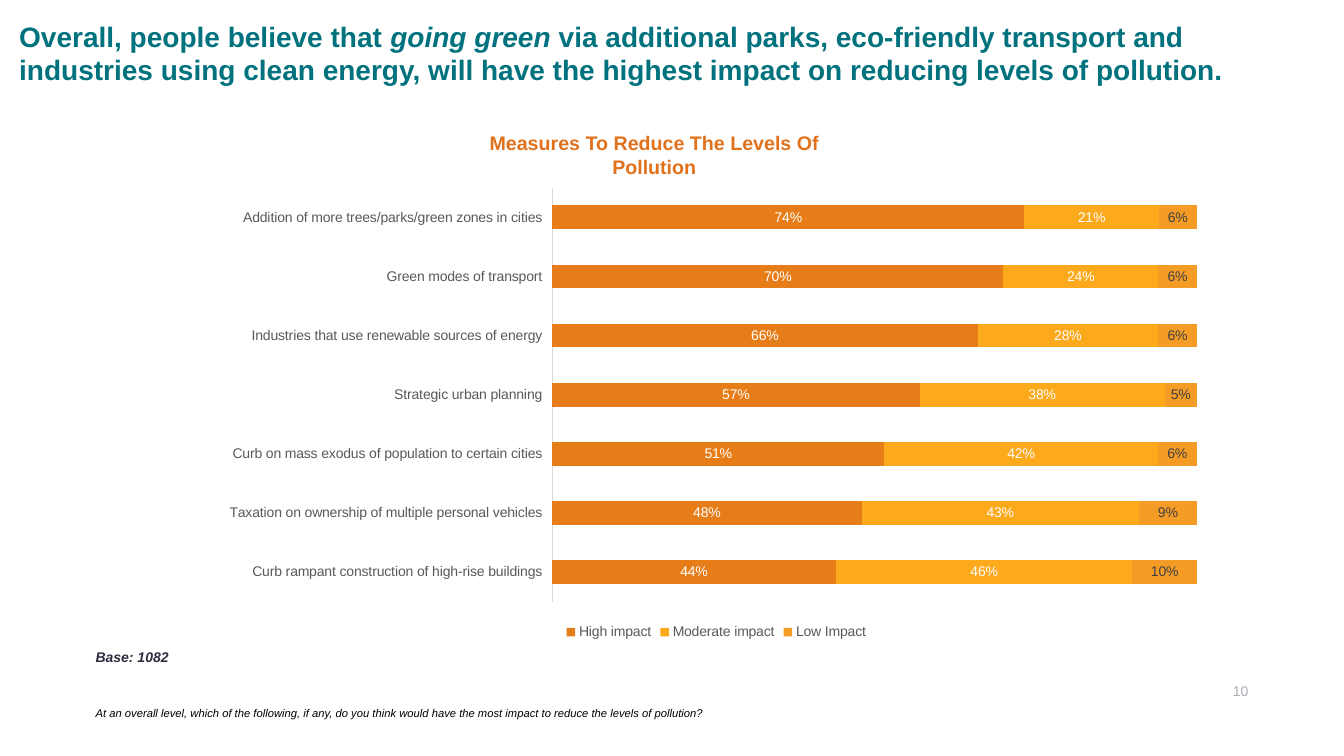
from lxml.etree import SubElement
from pptx import Presentation
from pptx.chart.data import CategoryChartData
from pptx.dml.color import RGBColor
from pptx.enum.chart import XL_CHART_TYPE, XL_LABEL_POSITION, XL_LEGEND_POSITION, XL_TICK_LABEL_POSITION, XL_TICK_MARK
from pptx.enum.text import MSO_ANCHOR, MSO_AUTO_SIZE, PP_ALIGN
from pptx.oxml import parse_xml
from pptx.oxml.ns import nsdecls, qn
from pptx.util import Inches, Pt

MEASURES = [
    ("Addition of more trees/parks/green zones in cities", 0.74, 0.21, 0.06),
    ("Green modes of transport", 0.70, 0.24, 0.06),
    ("Industries that use renewable sources of energy", 0.66, 0.28, 0.06),
    ("Strategic urban planning", 0.57, 0.38, 0.05),
    ("Curb on mass exodus of population to certain cities", 0.51, 0.42, 0.06),
    ("Taxation on ownership of multiple personal vehicles", 0.48, 0.43, 0.09),
    ("Curb rampant construction of high-rise buildings", 0.44, 0.46, 0.10),
]
IMPACTS = [
    ("High impact", "E77D18", "FFFFFF"),
    ("Moderate impact", "FCA91C", "FFFFFF"),
    ("Low Impact", "F59C27", "404040"),
]


def rgb(value):
    return RGBColor.from_string(value)


class SlideBuilder:
    typeface = "Arial"
    teal, orange, ink, grey, rule = "00727D", "E1711B", "332C41", "595959", "D9D9D9"

    def __init__(self, slide):
        self.slide = slide

    def style(self, font, size, color, bold=False, italic=None):
        font.name = self.typeface
        font.size = Pt(size)
        font.bold = bold
        font.italic = italic
        font.color.rgb = rgb(color)

    def headline(self, box, parts):
        title = self.slide.shapes.title
        title.left, title.top, title.width, title.height = map(Inches, box)
        frame = title.text_frame
        frame.word_wrap = True
        frame.auto_size = MSO_AUTO_SIZE.NONE
        frame.vertical_anchor = MSO_ANCHOR.TOP
        paragraph = frame.paragraphs[0]
        paragraph.alignment = PP_ALIGN.LEFT
        paragraph.line_spacing = 1.0
        paragraph.space_before = Pt(0)
        self.style(paragraph.font, 20, self.teal, bold=True)
        for words, italic in parts:
            run = paragraph.add_run()
            run.text = words
            run.font.italic = italic

    def text(self, box, words, size, color, bold=False, italic=False,
             align=PP_ALIGN.LEFT, opacity=None):
        frame = self.slide.shapes.add_textbox(*map(Inches, box)).text_frame
        frame.word_wrap = True
        paragraph = frame.paragraphs[0]
        paragraph.text = words
        paragraph.alignment = align
        self.style(paragraph.font, size, color, bold, italic)
        if opacity is not None:
            for tint in paragraph._p.iter(qn("a:srgbClr")):
                SubElement(tint, qn("a:alpha"), val=str(opacity * 1000))

    def impact_chart(self, box, plot_box, measures, impacts):
        data = CategoryChartData(number_format="0%")
        labels, *shares = zip(*measures)
        data.categories = labels
        for (impact, _, _), values in zip(impacts, shares):
            data.add_series(impact, values)
        chart = self.slide.shapes.add_chart(
            XL_CHART_TYPE.BAR_STACKED_100, *map(Inches, box), data).chart
        chart.has_title = False
        self.style(chart.font, 10, self.grey)

        chart.has_legend = True
        chart.legend.position = XL_LEGEND_POSITION.BOTTOM
        chart.legend.include_in_layout = False
        self.style(chart.legend.font, 10, self.grey)

        measure_axis = chart.category_axis
        measure_axis.reverse_order = True
        measure_axis.major_tick_mark = XL_TICK_MARK.NONE
        measure_axis.tick_label_position = XL_TICK_LABEL_POSITION.LOW
        measure_axis.format.line.color.rgb = rgb(self.rule)
        measure_axis.format.line.width = Pt(0.75)
        self.style(measure_axis.tick_labels.font, 10, self.grey)

        share_axis = chart.value_axis
        share_axis.visible = False
        share_axis.has_major_gridlines = False
        share_axis.minimum_scale, share_axis.maximum_scale = 0, 1

        plot = chart.plots[0]
        plot.gap_width, plot.overlap = 150, 100
        plot.vary_by_categories = False
        for series, (_, fill, label_color) in zip(plot.series, impacts):
            series.format.fill.solid()
            series.format.fill.fore_color.rgb = rgb(fill)
            value_labels = series.data_labels
            value_labels.show_value = True
            value_labels.number_format = "0%"
            value_labels.number_format_is_linked = False
            value_labels.position = XL_LABEL_POSITION.CENTER
            self.style(value_labels.font, 10, label_color)
        self.place_plot(chart, plot_box)

    def place_plot(self, chart, plot_box):
        sizes = "".join(f'<c:{key} val="{value}"/>' for key, value in zip("xywh", plot_box))
        layout = parse_xml(
            f'<c:layout {nsdecls("c")}><c:manualLayout><c:layoutTarget val="inner"/>'
            f'<c:xMode val="edge"/><c:yMode val="edge"/>{sizes}</c:manualLayout></c:layout>')
        plot_area = chart._chartSpace.chart.plotArea
        for automatic in plot_area.findall(qn("c:layout")):
            plot_area.remove(automatic)
        plot_area.insert(0, layout)


def main():
    deck = Presentation()
    deck.slide_width, deck.slide_height = Inches(13.33), Inches(7.5)
    builder = SlideBuilder(deck.slides.add_slide(deck.slide_layouts[5]))
    builder.headline((0.09, 0.14, 13.01, 1.11), [
        ("Overall, people believe that ", False),
        ("going green ", True),
        ("via additional parks, eco-friendly transport and industries using clean energy, "
         "will have the highest impact on reducing levels of pollution.", False),
    ])
    builder.impact_chart((2.14, 1.78, 9.93, 4.61), (0.336, 0.018, 0.644, 0.891),
                         MEASURES, IMPACTS)
    builder.text((4.57, 1.25, 3.84, 0.57), "Measures To Reduce The Levels Of Pollution",
                 14, builder.orange, bold=True, align=PP_ALIGN.CENTER)
    builder.text((0.85, 6.38, 1.78, 0.27), "Base: 1082", 10, builder.ink,
                 bold=True, italic=True)
    builder.text((0.85, 6.96, 9.93, 0.24),
                 "At an overall level, which of the following, if any, do you think would have "
                 "the most impact to reduce the levels of pollution?",
                 8, "000000", italic=True)
    builder.text((11.42, 6.72, 1.06, 0.27), "10", 10, builder.ink,
                 align=PP_ALIGN.RIGHT, opacity=40)
    deck.save("out.pptx")


if __name__ == "__main__":
    main()
